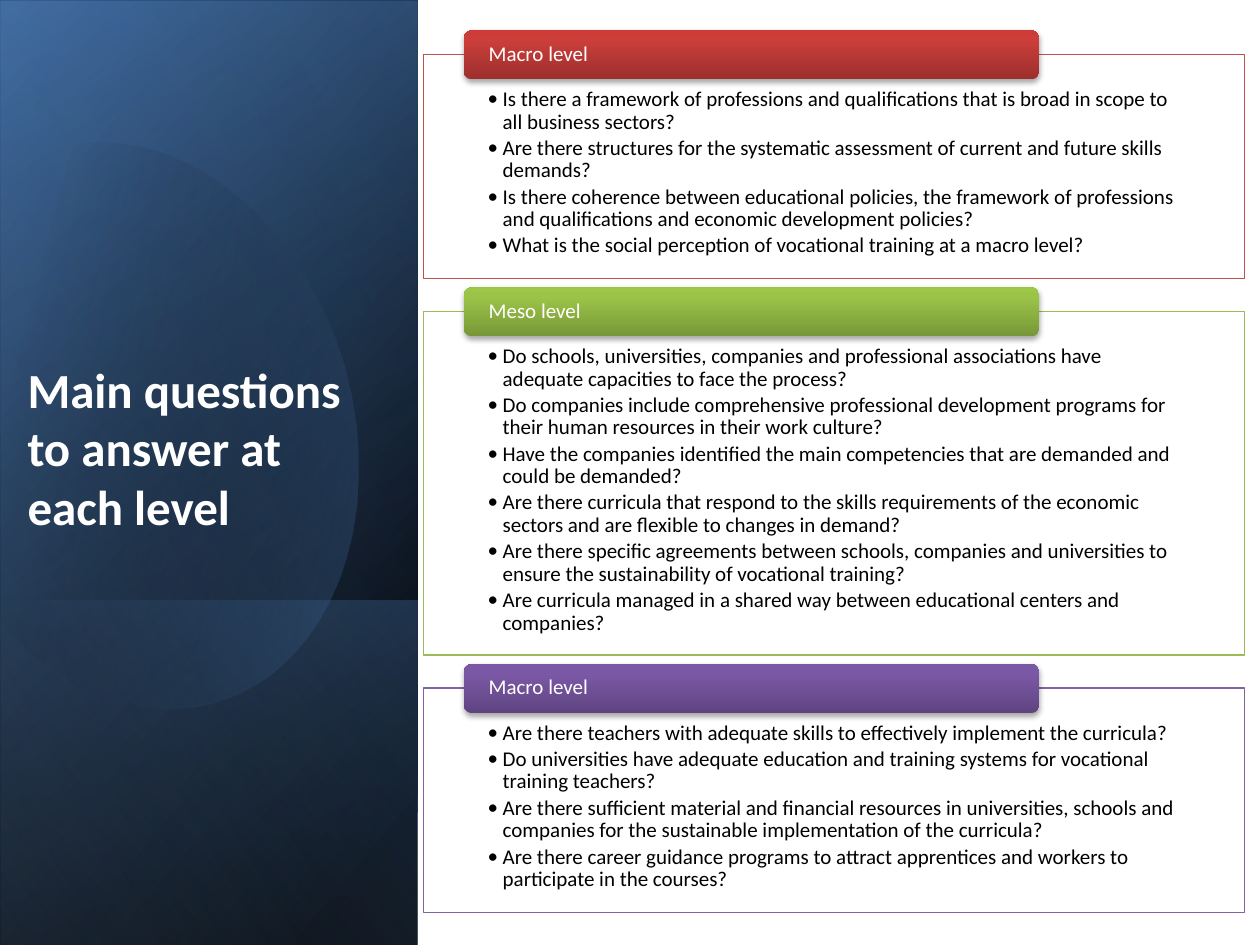
import math

from lxml import etree
from pptx import Presentation
from pptx.dml.color import RGBColor
from pptx.enum.shapes import MSO_SHAPE
from pptx.enum.text import MSO_ANCHOR, MSO_AUTO_SIZE, PP_ALIGN
from pptx.oxml import parse_xml
from pptx.oxml.ns import nsdecls, qn
from pptx.util import Inches, Pt

RECT, ROUND_RECT = MSO_SHAPE.RECTANGLE, MSO_SHAPE.ROUNDED_RECTANGLE
TOP, MIDDLE = MSO_ANCHOR.TOP, MSO_ANCHOR.MIDDLE
LEFT = PP_ALIGN.LEFT
FONT = "Calibri"

COLORS = {
    "white": "FFFFFF", "black": "000000",
    "navy": "376092", "blue": "4F81BD", "pale": "95B3D7",
    "red": "C0504D", "green": "9BBB59", "purple": "8064A2",
}

# Side panel layers: left, top, width, height, angle, stops (position, colour, opacity)
PANEL_LAYERS = [
    (-2.09, 2.1, 7.5, 3.31, 50, [(8, "black", 100), (100, "navy", 100)]),
    (-2.09, 2.11, 7.5, 3.31, 30, [(0, "black", 0), (99, "blue", 46)]),
    (0.29, 4.48, 2.74, 3.31, 130, [(2, "blue", 29), (100, "black", 30)]),
]
PANEL_GLAZE = (-2.09, 2.1, 7.5, 3.31, 120, [(0, "black", 0), (99, "pale", 11)])

# Oval outline: start point, then curves (6 numbers) and lines (2 numbers)
OVAL_START = (0.96, 1.14)
OVAL_PARTS = [
    (1.71, 1.22, 2.44, 1.92, 2.73, 2.9), (3.07, 4.12, 2.62, 5.31, 1.71, 5.57),
    (1.14, 5.74, 0.53, 5.5, 0.07, 5), (-0.03, 4.88), (-0.25, 1.66), (-0.15, 1.54),
    (0.02, 1.37, 0.22, 1.25, 0.45, 1.18), (0.62, 1.13, 0.79, 1.12, 0.96, 1.14),
]
OVAL_CENTER, OVAL_TURN = (1.19, 3.35), -16.1

# Levels: heading, line colour, heading gradient, box height, questions
LEVELS = [
    ("Macro level", "red", ("9C2F2D", "CB3E3A", "CE3B37"), 1.78, [
        "Is there a framework of professions and qualifications that is broad in scope to all business sectors?",
        "Are there structures for the systematic assessment of current and future skills demands?",
        "Is there coherence between educational policies, the framework of professions and qualifications "
        "and economic development policies?",
        "What is the social perception of vocational training at a macro level?",
    ]),
    ("Meso level", "green", ("779737", "9BC348", "9DC746"), 2.73, [
        "Do schools, universities, companies and professional associations have adequate capacities "
        "to face the process?",
        "Do companies include comprehensive professional development programs for their human resources "
        "in their work culture?",
        "Have the companies identified the main competencies that are demanded and could be demanded?",
        "Are there curricula that respond to the skills requirements of the economic sectors "
        "and are flexible to changes in demand?",
        "Are there specific agreements between schools, companies and universities "
        "to ensure the sustainability of vocational training?",
        "Are curricula managed in a shared way between educational centers and companies?",
    ]),
    ("Macro level", "purple", ("5F4480", "7B58A6", "7C57A8"), 1.78, [
        "Are there teachers with adequate skills to effectively implement the curricula?",
        "Do universities have adequate education and training systems for vocational training teachers?",
        "Are there sufficient material and financial resources in universities, schools and companies "
        "for the sustainable implementation of the curricula?",
        "Are there career guidance programs to attract apprentices and workers to participate in the courses?",
    ]),
]
BOX_LEFT, BOX_TOP, BOX_WIDTH, BOX_GAP = 3.36, 0.43, 6.52, 0.26
HEAD_LEFT, HEAD_WIDTH, HEAD_HEIGHT, HEAD_RISE = 3.68, 4.57, 0.39, 0.19


def rgb(name):
    return RGBColor.from_string(COLORS[name])


def set_gradient(sp, angle, stops):
    """Fill with stops of (position, hex, opacity), all in percent."""
    gs = "".join(
        f'<a:gs pos="{pos * 1000}"><a:srgbClr val="{color}">'
        f'<a:alpha val="{alpha * 1000}"/></a:srgbClr></a:gs>'
        for pos, color, alpha in stops)
    grad = parse_xml(
        f'<a:gradFill {nsdecls("a")} rotWithShape="1"><a:gsLst>{gs}</a:gsLst>'
        f'<a:lin ang="{angle * 60000}" scaled="0"/></a:gradFill>')
    sp.fill.background()
    no_fill = sp._element.spPr.find(qn("a:noFill"))
    no_fill.getparent().replace(no_fill, grad)


def add_box(slide, kind, left, top, width, height):
    sp = slide.shapes.add_shape(kind, Inches(left), Inches(top), Inches(width), Inches(height))
    sp.shadow.inherit = False
    sp.line.fill.background()
    return sp


def add_shadow(sp):
    effects = sp._element.spPr.find(qn("a:effectLst"))
    effects.append(parse_xml(
        f'<a:outerShdw {nsdecls("a")} blurRad="{Pt(3.1)}" dist="{Pt(1.8)}" dir="5400000" rotWithShape="0">'
        '<a:srgbClr val="000000"><a:alpha val="35000"/></a:srgbClr></a:outerShdw>'))


def set_bullet(p, size):
    p.level = 1
    pPr = p._p.get_or_add_pPr()
    pPr.set("marL", str(Inches(0.12)))
    pPr.set("indent", str(-Inches(0.12)))
    etree.SubElement(pPr, qn("a:buFont"), typeface=FONT)
    etree.SubElement(pPr, qn("a:buChar"), char="•")
    # The paragraph end carries the size that the bullet takes
    etree.SubElement(p._p, qn("a:endParaRPr"), sz=str(size * 100))


def set_text(sp, texts, size=12, color="black", bold=None, anchor=TOP,
             insets=(0.1, 0.05, 0.1, 0.05), spacing=None, after=None, bullet=False):
    tf = sp.text_frame
    tf.word_wrap = True
    tf.vertical_anchor = anchor
    tf.margin_left, tf.margin_top, tf.margin_right, tf.margin_bottom = map(Inches, insets)
    for i, text in enumerate(texts):
        p = tf.add_paragraph() if i else tf.paragraphs[0]
        p.alignment, p.line_spacing, p.space_after = LEFT, spacing, after
        r = p.add_run()
        r.text = text
        r.font.name, r.font.size, r.font.bold = FONT, Pt(size), bold
        r.font.color.rgb = rgb(color)
        if bullet:
            set_bullet(p, size)


def add_panel_layer(slide, left, top, width, height, angle, stops):
    sp = add_box(slide, RECT, left, top, width, height)
    sp.rotation = 90
    sp._element.spPr.xfrm.set("flipH", "1")
    set_gradient(sp, angle, [(pos, COLORS[name], alpha) for pos, name, alpha in stops])


def oval_points(steps=16):
    points = [OVAL_START]
    for part in OVAL_PARTS:
        if len(part) == 2:
            points.append(part)
            continue
        curve = [points[-1], part[:2], part[2:4], part[4:]]
        for step in range(1, steps + 1):
            t = step / steps
            weights = [math.comb(3, k) * t**k * (1 - t)**(3 - k) for k in range(4)]
            points.append(tuple(sum(w * pt[axis] for w, pt in zip(weights, curve)) for axis in (0, 1)))
    return points


def add_oval(slide):
    # Turn the outline upright, so that the shape's rotation tilts it back
    turn = math.radians(-OVAL_TURN)
    cx, cy = OVAL_CENTER
    upright = [
        (Inches(cx + (x - cx) * math.cos(turn) - (y - cy) * math.sin(turn)),
         Inches(cy + (x - cx) * math.sin(turn) + (y - cy) * math.cos(turn)))
        for x, y in oval_points()]
    builder = slide.shapes.build_freeform(*upright[0])
    builder.add_line_segments(upright[1:], close=True)
    sp = builder.convert_to_shape()
    sp.rotation = OVAL_TURN
    sp.shadow.inherit = False
    sp.line.fill.background()
    set_gradient(sp, 30, [(29, COLORS["black"], 0), (100, COLORS["blue"], 43)])


def add_level(slide, top, heading, color, shades, height, questions):
    # Framed list of questions
    sp = add_box(slide, RECT, BOX_LEFT, top, BOX_WIDTH, height)
    sp.fill.solid()
    sp.fill.fore_color.rgb = rgb("white")
    sp.line.color.rgb = rgb(color)
    sp.line.width = Pt(0.75)
    set_text(sp, questions, insets=(0.51, 0.27, 0.51, 0.09), spacing=0.9, after=Pt(2), bullet=True)
    # Heading tab over the top edge
    sp = add_box(slide, ROUND_RECT, HEAD_LEFT, top - HEAD_RISE, HEAD_WIDTH, HEAD_HEIGHT)
    set_gradient(sp, 270, [(pos, shade, 100) for pos, shade in zip((0, 80, 100), shades)])
    add_shadow(sp)
    set_text(sp, [heading], color="white", anchor=MIDDLE, insets=(0.18, 0, 0.18, 0.01), spacing=0.9)


def main():
    prs = Presentation()
    prs.slide_width, prs.slide_height = Inches(10), Inches(7.5)
    slide = prs.slides.add_slide(prs.slide_layouts[6])

    # Side panel
    for layer in PANEL_LAYERS:
        add_panel_layer(slide, *layer)
    add_oval(slide)
    add_panel_layer(slide, *PANEL_GLAZE)

    # Levels, stacked with equal gaps
    top = BOX_TOP
    for heading, color, shades, height, questions in LEVELS:
        add_level(slide, top, heading, color, shades, height, questions)
        top += height + BOX_GAP

    # Title
    title = slide.shapes.add_textbox(Inches(0.12), Inches(2.8), Inches(2.91), Inches(1.52))
    set_text(title, ["Main questions to answer at each level"], size=28, color="white", bold=True)
    title.text_frame.auto_size = MSO_AUTO_SIZE.SHAPE_TO_FIT_TEXT

    prs.save("out.pptx")


if __name__ == "__main__":
    main()
